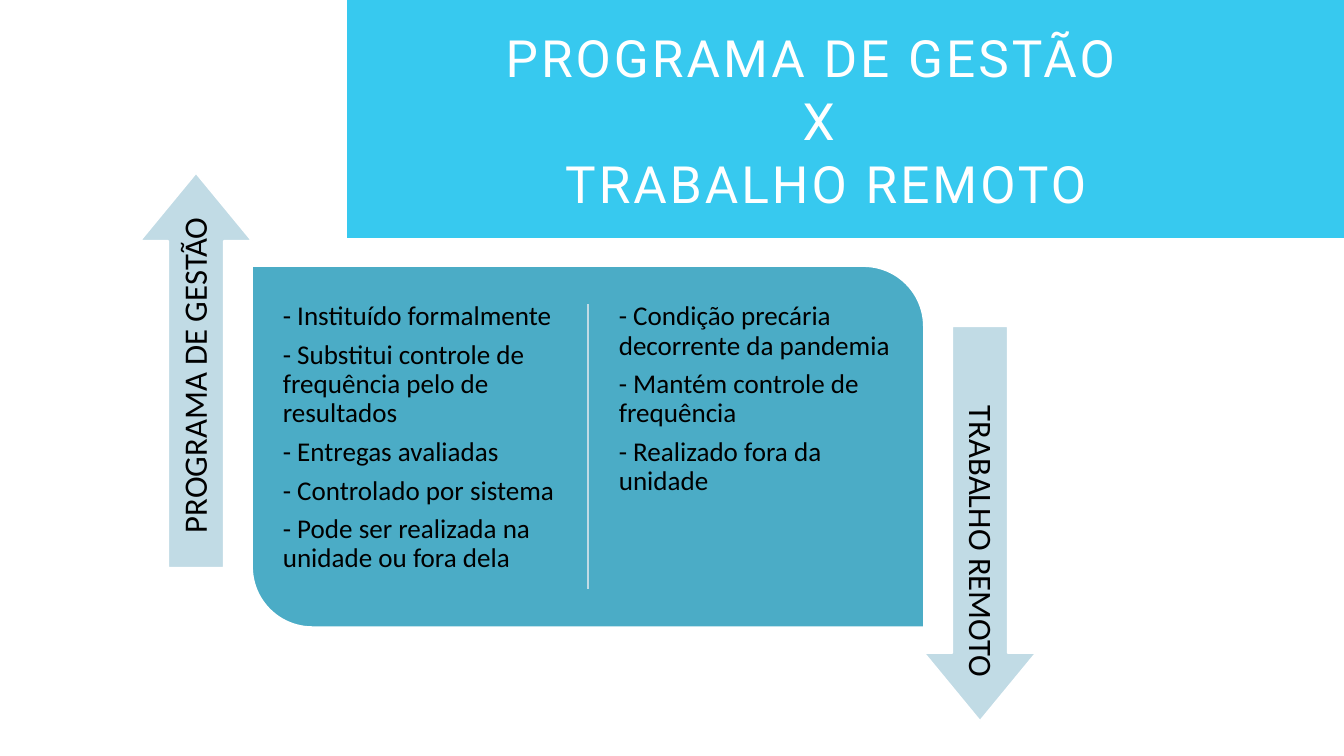
"""Build the slide comparing the management programme with remote work."""
from lxml import etree
from pptx import Presentation
from pptx.dml.color import RGBColor
from pptx.enum.shapes import MSO_CONNECTOR, MSO_SHAPE
from pptx.enum.text import MSO_ANCHOR, MSO_AUTO_SIZE, PP_ALIGN
from pptx.oxml.ns import qn
from pptx.util import Pt

PX = 9525
RECT, DIAGONAL, ARROW = MSO_SHAPE.RECTANGLE, MSO_SHAPE.ROUND_2_DIAG_RECTANGLE, MSO_SHAPE.RIGHT_ARROW
STRAIGHT = MSO_CONNECTOR.STRAIGHT
TOP, MIDDLE = MSO_ANCHOR.TOP, MSO_ANCHOR.MIDDLE
LEFT, CENTER, RIGHT = PP_ALIGN.LEFT, PP_ALIGN.CENTER, PP_ALIGN.RIGHT
NO_FIT = MSO_AUTO_SIZE.NONE

THEME = {
    "white": RGBColor.from_string("FFFFFF"),
    "black": RGBColor.from_string("000000"),
    "banner": RGBColor.from_string("37C9EF"),
    "panel": RGBColor.from_string("4BACC6"),
    "pale": RGBColor.from_string("C1DBE5"),
    "body": {"name": "Calibri", "size": Pt(29)},
    "label": {"name": "Calibri", "size": Pt(35)},
    "title": {"name": "Roboto", "size": Pt(55)},
}


def add_block(kind, box, fill, line=None, adjustments=(), rotation=0):
    sp = s.shapes.add_shape(kind, *[v * PX for v in box])
    sp.shadow.inherit = False
    sp.rotation = rotation
    for i, value in enumerate(adjustments):
        sp.adjustments[i] = value
    sp.fill.solid()
    sp.fill.fore_color.rgb = fill
    if line is None:
        sp.line.fill.background()
    else:
        sp.line.color.rgb = line
        sp.line.width = Pt(2)


def write(sp, lines, font, color, inset, anchor, paragraph):
    tf = sp.text_frame
    frame = {"word_wrap": True, "auto_size": NO_FIT, "vertical_anchor": anchor}
    frame |= {f"margin_{side}": inset * PX for side in ("left", "top", "right", "bottom")}
    for key, value in frame.items():
        setattr(tf, key, value)
    for i, text in enumerate(lines):
        p = tf.add_paragraph() if i else tf.paragraphs[0]
        for key, value in paragraph.items():
            setattr(p, key, value)
        r = p.add_run()
        r.text = text
        for key, value in font.items():
            setattr(r.font, key, value)
        r.font.color.rgb = color


prs = Presentation()
prs.slide_width, prs.slide_height = 1920 * PX, 1080 * PX
s = prs.slides.add_slide(prs.slide_layouts[5])

add_block(DIAGONAL, (360, 380, 960, 516), THEME["panel"], THEME["white"], (0, 0.167))
divider = s.shapes.add_connector(STRAIGHT, 840 * PX, 435 * PX, 840 * PX, 842 * PX)
divider.line.color.rgb = THEME["pale"]
divider.line.width = Pt(2)
etree.SubElement(divider._element.spPr, qn("a:effectLst"))

columns = [
    ["- Instituído formalmente", "- Substitui controle de frequência pelo de resultados",
     "- Entregas avaliadas", "- Controlado por sistema",
     "- Pode ser realizada na unidade ou fora dela"],
    ["- Condição precária decorrente da pandemia", "- Mantém controle de frequência",
     "- Realizado fora da unidade"],
]
for i, lines in enumerate(columns):
    sp = s.shapes.add_textbox((392 + 480 * i) * PX, 420 * PX, 416 * PX, 438 * PX)
    write(sp, lines, THEME["body"], THEME["black"], 12, TOP,
          {"alignment": LEFT, "line_spacing": 0.9, "space_after": Pt(10)})

arrows = [
    ("PROGRAMA DE GESTÃO", 270, (-2, 449), (23, 514)),
    ("TRABALHO REMOTO", 90, (1118, 668), (1142, 684)),
]
for text, rotation, arrow_at, label_at in arrows:
    add_block(ARROW, (*arrow_at, 564, 160), THEME["pale"], THEME["white"], (0.498, 0.607), rotation)
    sp = s.shapes.add_textbox(*[v * PX for v in (*label_at, 515, 80)])
    sp.rotation = rotation
    write(sp, [text], THEME["label"], THEME["black"], 14, MIDDLE,
          {"alignment": RIGHT, "line_spacing": 0.9, "space_after": Pt(12)})

add_block(RECT, (496, -3, 1424, 343), THEME["banner"])
title = s.shapes.title
s.shapes._spTree.append(title._element)
for key, value in {"left": 563, "top": 35, "width": 1213, "height": 269}.items():
    setattr(title, key, value * PX)
write(title, ["PROGRAMA DE GESTÃO ", "X", " TRABALHO REMOTO"], THEME["title"], THEME["white"], 0, TOP,
      {"alignment": CENTER, "line_spacing": Pt(67.7), "space_before": Pt(0)})
for p in title.text_frame.paragraphs:
    p.runs[0].font._element.set("spc", "330")

prs.save("out.pptx")
